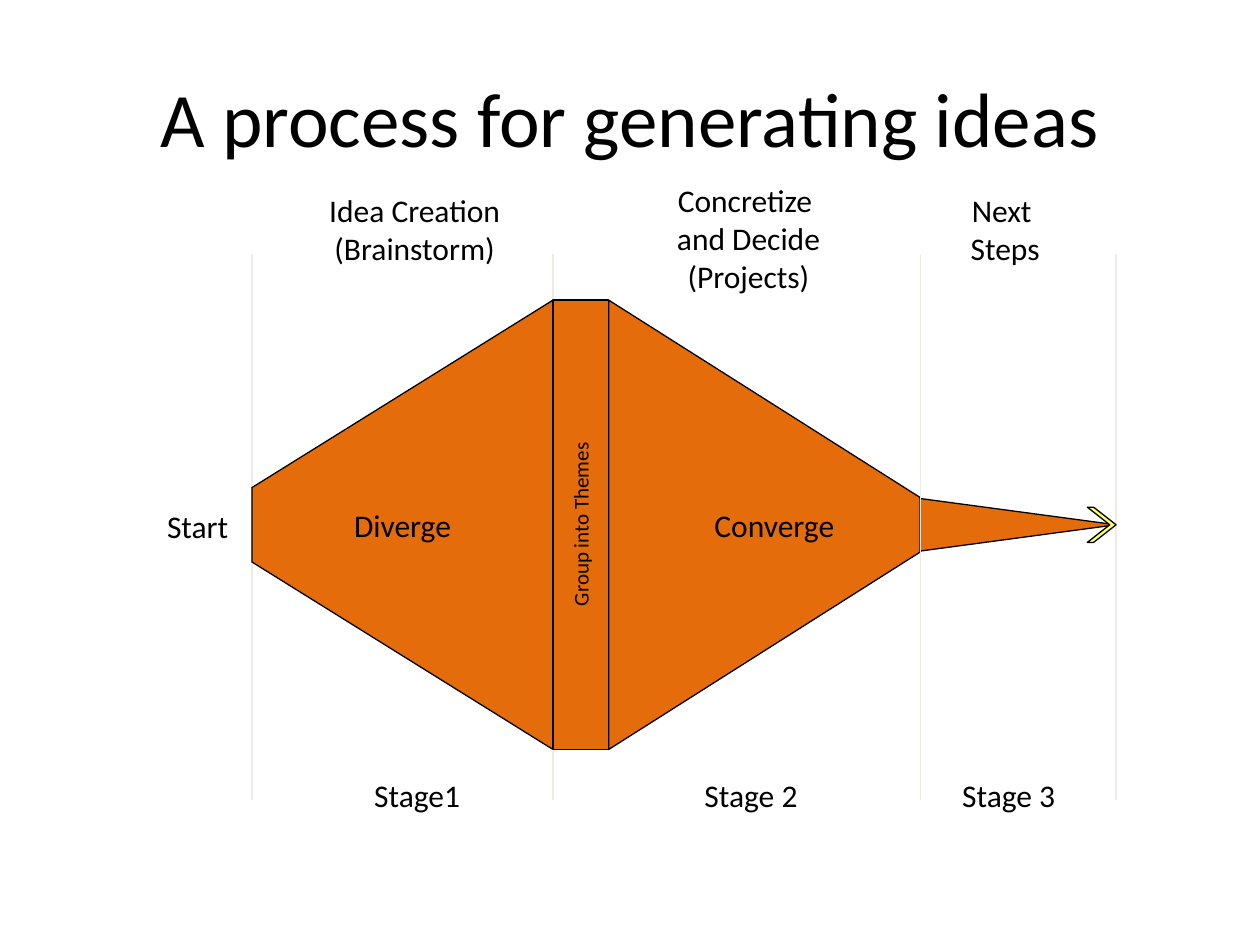
from dataclasses import dataclass

from lxml import etree
from pptx import Presentation
from pptx import util as u
from pptx.dml.color import RGBColor
from pptx.enum import shapes, text
from pptx.oxml.ns import qn

Cm = u.Cm
BLACK, ORANGE, YELLOW, RULE = "000000", "E46C0A", "FFFF66", "EEECE1"
START_X, PEAK_X, BAND_END_X, NARROW_X, TIP_X = 5.08, 11.15, 12.27, 18.55, 22.5
AXIS_Y = 10.58
PEAK_HALF = 4.53
RULE_TOP, RULE_BOTTOM = 5.13, 16.13


@dataclass(frozen=True)
class Label:
    words: str
    left: float
    top: float
    width: float
    height: float
    size: int = 18
    rotation: int = 0
    wrap: bool = True
    middle: bool = False


@dataclass(frozen=True)
class Funnel:
    """A section symmetric about the axis, given by its half heights."""
    left: float
    right: float
    left_half: float
    right_half: float
    words: str = ""
    left_margin: float = 0.25


HEADINGS_AND_STAGES = [
    Label("A process for generating ideas", 1.27, 0.76, 22.86, 3.18, size=44, middle=True),
    Label("Next \vSteps", 19.3, 3.73, 1.93, 1.8, wrap=False),
    Label("Concretize \vand Decide (Projects)", 13.11, 3.53, 3.96, 2.57),
    Label("Idea Creation (Brainstorm)", 6.1, 3.73, 4.52, 1.8),
    Label("Stage 3", 19.13, 15.52, 2.41, 1.02, wrap=False),
    Label("Stage 2", 13.16, 15.52, 3.96, 1.02),
    Label("Stage1", 6.15, 15.52, 4.52, 1.02),
    Label("Start", 2.69, 9.3, 2.59, 2.59, wrap=False, middle=True),
]
THEMES = Label("Group into Themes", 9.78, 10.19, 3.84, 0.76, size=12, rotation=270, wrap=False)
SECTIONS = [
    Funnel(START_X, PEAK_X, 0.75, PEAK_HALF, "Diverge"),
    Funnel(BAND_END_X, NARROW_X, PEAK_HALF, 0.55, "Converge", left_margin=0.65),
    Funnel(NARROW_X, TIP_X, 0.53, 0),
]
BAND = Funnel(PEAK_X, BAND_END_X, PEAK_HALF, PEAK_HALF)


def colour(hex_value: str) -> RGBColor:
    return RGBColor.from_string(hex_value)


def write(shape, words: str, size: int, middle: bool) -> None:
    frame = shape.text_frame
    frame.text = words
    frame.vertical_anchor = text.MSO_ANCHOR.MIDDLE if middle else text.MSO_ANCHOR.TOP
    for para in frame.paragraphs:
        para.alignment = text.PP_ALIGN.CENTER
        for span in para.runs:
            span.font.name = "Calibri"
            span.font.size = u.Pt(size)
            span.font.color.rgb = colour(BLACK)


def paint(shape, fill: str) -> None:
    shape.shadow.inherit = False
    shape.fill.solid()
    shape.fill.fore_color.rgb = colour(fill)
    shape.line.color.rgb = colour(BLACK)
    shape.line.width = u.Pt(0.75)


def add_label(page, label: Label) -> None:
    box = page.shapes.add_textbox(
        Cm(label.left), Cm(label.top), Cm(label.width), Cm(label.height))
    box.rotation = label.rotation
    write(box, label.words, label.size, label.middle)
    box.text_frame.word_wrap = label.wrap


def add_funnel(page, funnel: Funnel) -> None:
    corners = [
        (funnel.right, AXIS_Y - funnel.right_half),
        (funnel.right, AXIS_Y + funnel.right_half),
        (funnel.left, AXIS_Y + funnel.left_half),
    ]
    builder = page.shapes.build_freeform(
        Cm(funnel.left), Cm(AXIS_Y - funnel.left_half))
    builder.add_line_segments([(Cm(x), Cm(y)) for x, y in corners], close=True)
    shape = builder.convert_to_shape()
    paint(shape, ORANGE)
    if funnel.words:
        write(shape, funnel.words, 18, True)
        shape.text_frame.word_wrap = False
        shape.text_frame.margin_left = Cm(funnel.left_margin)


def add_rule(page, x: float) -> None:
    rule = page.shapes.add_connector(
        shapes.MSO_CONNECTOR.STRAIGHT, Cm(x), Cm(RULE_TOP), Cm(x), Cm(RULE_BOTTOM))
    rule.line.color.rgb = colour(RULE)
    rule.line.width = u.Pt(0.75)
    etree.SubElement(rule.line._get_or_add_ln().getparent(), qn("a:effectLst"))


def add_arrowhead(page) -> None:
    width, height = 0.58, 0.71
    head = page.shapes.add_shape(
        shapes.MSO_SHAPE.CHEVRON, Cm(TIP_X - width), Cm(AXIS_Y - height / 2),
        Cm(width), Cm(height))
    head.adjustments[0] = 0.78
    paint(head, YELLOW)


def main() -> None:
    deck = Presentation()
    deck.slide_width, deck.slide_height = Cm(25.4), Cm(19.05)
    page = deck.slides.add_slide(deck.slide_layouts[6])

    add_rule(page, START_X)
    for section in SECTIONS:
        add_funnel(page, section)
    for label in HEADINGS_AND_STAGES:
        add_label(page, label)
    for x in (PEAK_X, NARROW_X, TIP_X):
        add_rule(page, x)
    add_funnel(page, BAND)
    add_label(page, THEMES)
    add_arrowhead(page)

    deck.save("out.pptx")


if __name__ == "__main__":
    main()
